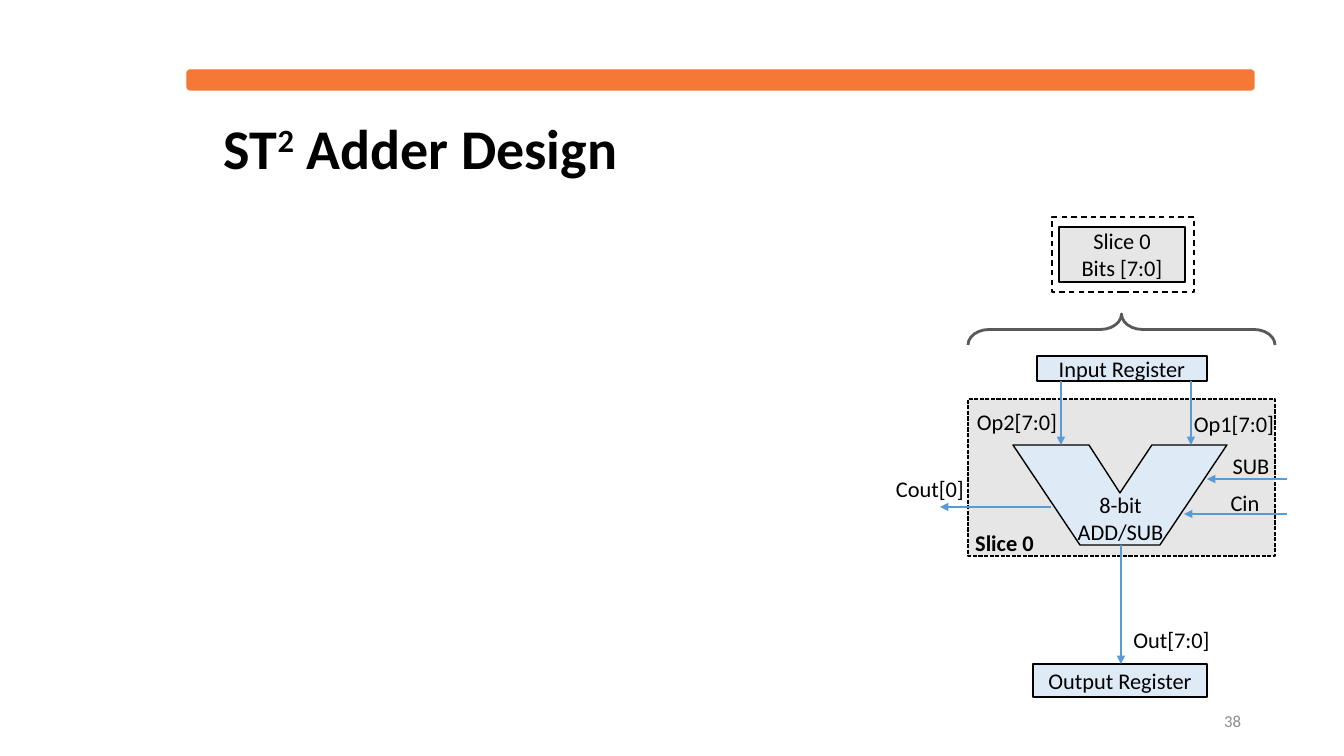
from pptx import Presentation
from pptx.dml.color import RGBColor
from pptx.enum.dml import MSO_LINE as Dash
from pptx.enum.shapes import MSO_CONNECTOR as Conn, MSO_SHAPE as Geo
from pptx.enum.text import MSO_ANCHOR as Anchor, PP_ALIGN as Align
from pptx.oxml.ns import qn
from pptx.util import Pt
from lxml import etree

PX = 914400 / 100.8
INK = {"bar": "F47836", "grey": "E7E6E6", "pale": "DEEBF7", "black": "000000",
       "blue": "5B9BD5", "brace": "595959", "page": "8C8C8C"}

BAR = (187, 70, 1067, 20)
AREA = (968, 399, 307, 157)
REGS = [("Input Register", (1037, 356, 170, 25)),
        ("Output Register", (1033, 664, 174, 33))]
ADDER = [(1013, 445), (1089, 445), (1120, 493), (1152, 445),
         (1227, 445), (1160, 545), (1080, 545)]
ARROWS = [(1061, 381, 1061, 445), (1191, 381, 1191, 445),
          (1121, 545, 1121, 664), (1287, 479, 1207, 479),
          (1287, 514, 1184, 514), (1051, 507, 940, 507)]
LABELS = [("Cin", (1200, 484, 90, 37)), ("SUB", (1206, 447, 90, 37)),
          ("Cout[0]", (885, 470, 90, 37)), ("Op2[7:0]", (966, 403, 102, 37)),
          ("Op1[7:0]", (1179, 405, 110, 37)), ("Out[7:0]", (1116, 621, 111, 37))]
UNIT = ("8-bit ADD/SUB", (1066, 486, 109, 64))
NAME = ("Slice 0", (956, 524, 97, 37))
SLICE = ("Slice 0\nBits [7:0]", (1059, 227, 126, 55))
FRAME = (1052, 217, 142, 75)
BRACE = (1106, 176, 31, 307)
PAGE = ("38", (949, 701, 302, 40))
TITLE = (["ST", "2", " Adder Design"], (214, 105, 1049, 92))


def emu(vals):
    return [round(v * PX) for v in vals]


def rgb(name):
    return RGBColor.from_string(INK[name])


def paint(shape, fill, line="black", width=1, dash=None):
    shape.shadow.inherit = False
    if fill:
        shape.fill.solid()
        shape.fill.fore_color.rgb = rgb(fill)
    else:
        shape.fill.background()
    shape.line.color.rgb = rgb(line)
    shape.line.width = Pt(width)
    if dash:
        shape.line.dash_style = dash
    return shape


def add(box, fill, geo=Geo.RECTANGLE, **style):
    return paint(slide.shapes.add_shape(geo, *emu(box)), fill, **style)


def style(frame, size=16, color="black", bold=False, align=Align.CENTER):
    for para in frame.paragraphs:
        para.alignment = align
        for run in para.runs:
            font = run.font
            font.name, font.size, font.bold = "Calibri", Pt(size), bold
            font.color.rgb = rgb(color)


def fill_text(shape, text, **look):
    frame = shape.text_frame
    frame.text = text
    frame.vertical_anchor = Anchor.MIDDLE
    frame.word_wrap = True
    style(frame, **look)


def label(text, box, wrap=False, anchor=Anchor.TOP, **look):
    frame = slide.shapes.add_textbox(*emu(box)).text_frame
    frame.text = text
    frame.word_wrap = wrap
    frame.vertical_anchor = anchor
    style(frame, **look)


def arrow(ends):
    line = slide.shapes.add_connector(Conn.STRAIGHT, *emu(ends))
    line.line.color.rgb = rgb("blue")
    line.line.width = Pt(1.5)
    etree.SubElement(line.line._get_or_add_ln(), qn("a:tailEnd"), type="triangle")
    etree.SubElement(line._element.spPr, qn("a:effectLst"))


def title(parts, box):
    frame = slide.shapes.add_textbox(*emu(box)).text_frame
    frame.word_wrap = True
    frame.vertical_anchor = Anchor.MIDDLE
    para = frame.paragraphs[0]
    para.line_spacing = 0.9
    for part in parts:
        para.add_run().text = part
    style(frame, size=40, bold=True, align=Align.LEFT)
    para.runs[1].font._element.set("baseline", "30000")


deck = Presentation()
deck.slide_width, deck.slide_height = emu((1344, 756))
slide = deck.slides.add_slide(deck.slide_layouts[6])

add(BAR, "bar", Geo.ROUNDED_RECTANGLE, line="bar")
add(AREA, "grey", dash=Dash.SQUARE_DOT)
for text, box in REGS:
    fill_text(add(box, "pale"), text)
form = slide.shapes.build_freeform(*ADDER[0], scale=PX)
form.add_line_segments(ADDER[1:], close=True)
paint(form.convert_to_shape(), "pale")
for ends in ARROWS:
    arrow(ends)
label(*UNIT, wrap=True)
for text, box in LABELS:
    label(text, box)
label(*NAME, bold=True)
fill_text(add(SLICE[1], "grey"), SLICE[0])
add(FRAME, None, dash=Dash.DASH)
brace = add(BRACE, None, Geo.LEFT_BRACE, line="brace", width=2)
brace.rotation = 90
brace.adjustments[0] = 0.68
label(*PAGE, wrap=True, anchor=Anchor.MIDDLE, size=12, color="page", align=Align.RIGHT)
title(*TITLE)

deck.save("out.pptx")
